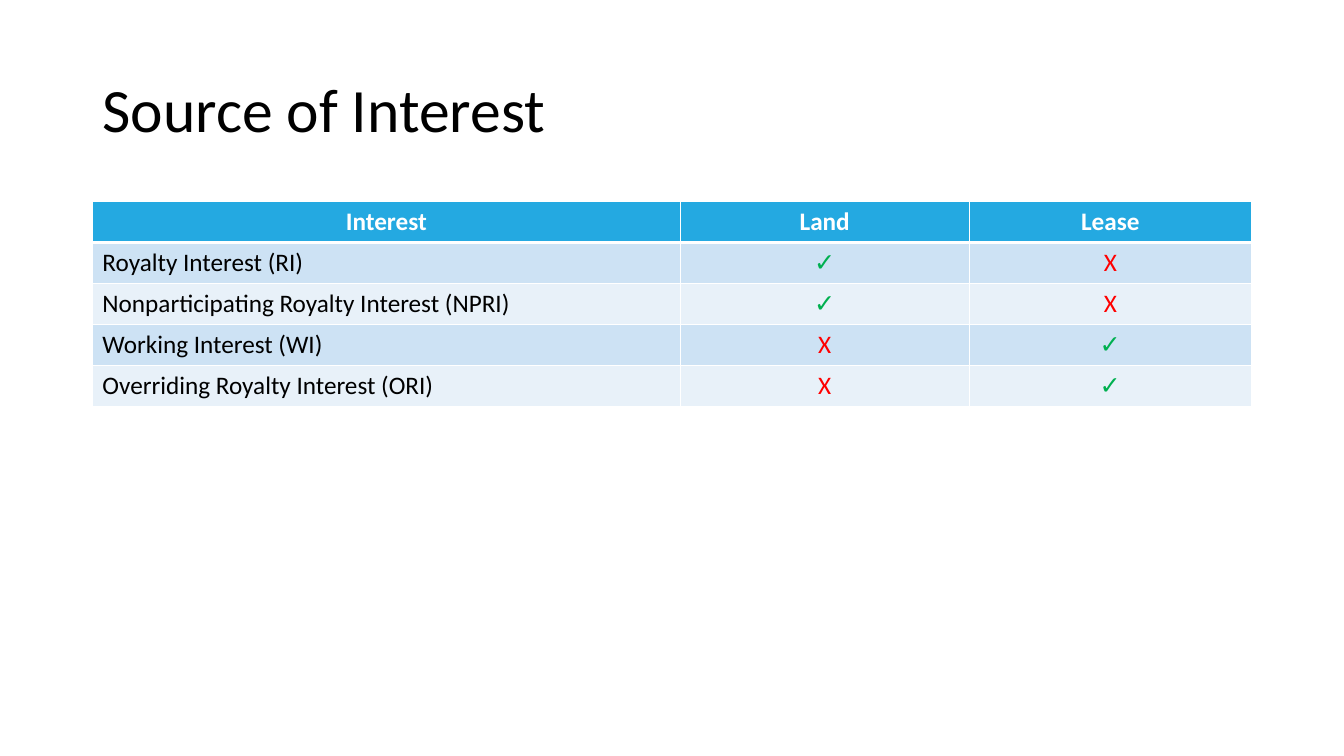
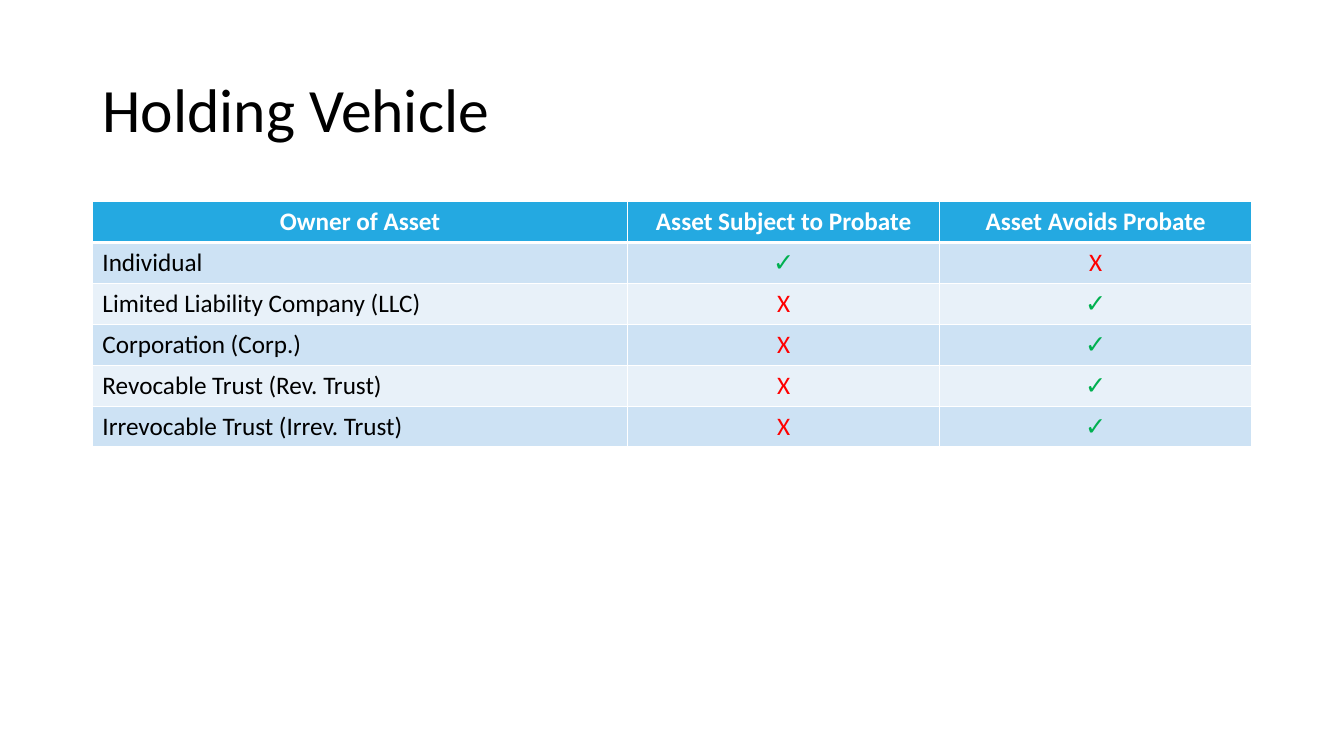
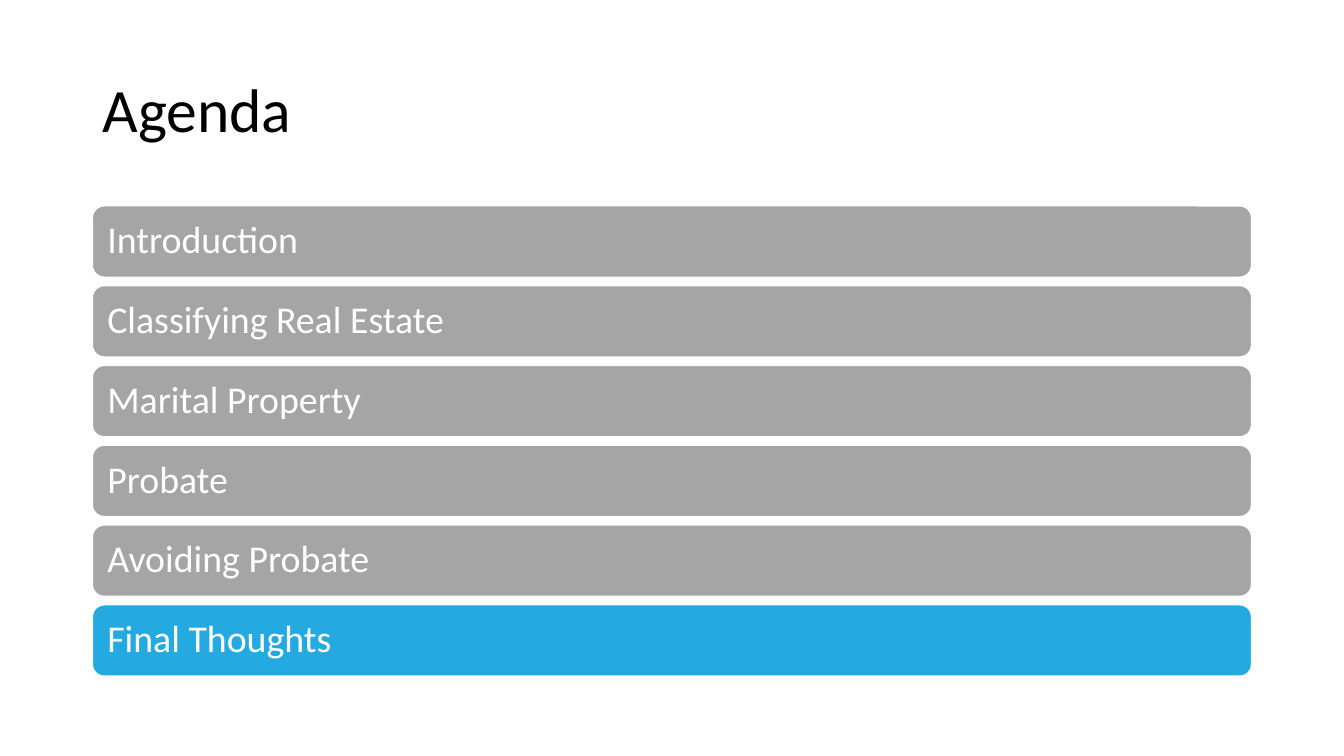
from dataclasses import dataclass

from lxml.etree import SubElement as Sub
from pptx import Presentation
from pptx.dml.color import RGBColor as RGB
from pptx.enum.shapes import MSO_SHAPE as Shape
from pptx.enum.text import MSO_ANCHOR as Anchor, PP_ALIGN as Align
from pptx.oxml.ns import qn
from pptx.util import Pt

PX = 9525
LEFT, WIDE = 88, 1104


@dataclass(frozen=True)
class Theme:
    font: str = "Calibri"
    title: int = 44
    cell: int = 18
    item: int = 27
    black: str = "000000"
    white: str = "FFFFFF"
    blue: str = "24A9E1"
    gray: str = "A5A5A5"
    bands: tuple = ("E8F1F9", "CDE2F4")
    yes: str = "00B050"
    no: str = "FF0000"


look = Theme()


def put(frame, text, size, color, bold=False, align=Align.LEFT, space=None):
    para = frame.paragraphs[0]
    para.alignment = align
    para.line_spacing = space
    run = para.add_run()
    run.text = text
    font = run.font
    font.name, font.size, font.bold = look.font, Pt(size), bold
    font.color.rgb = RGB.from_string(color)


def edge(cell, **sides):
    """Draw white cell borders; sides maps L, R, T and B to points."""
    props = cell._tc.get_or_add_tcPr()
    for side, width in sides.items():
        line = Sub(props, qn(f"a:ln{side}"), w=str(Pt(width)))
        Sub(Sub(line, qn("a:solidFill")), qn("a:srgbClr"), val=look.white)


deck = Presentation()
deck.slide_width, deck.slide_height = 1280 * PX, 720 * PX

plain = deck.slide_layouts.get_by_name("Title Only")
head = plain.placeholders[0]
head.left, head.top = LEFT * PX, 38 * PX
head.width, head.height = WIDE * PX, 139 * PX
head.text_frame.vertical_anchor = Anchor.MIDDLE

slides = {}
for name in ("Source of Interest", "Holding Vehicle", "Agenda"):
    slide = slides[name] = deck.slides.add_slide(plain)
    put(slide.shapes.title.text_frame, name, look.title, look.black, space=0.9)

# Tables
grids = {
    "Source of Interest": ((560, 275, 269), [
        ("Interest", "Land", "Lease"),
        ("Royalty Interest (RI)", "✓", "X"),
        ("Nonparticipating Royalty Interest (NPRI)", "✓", "X"),
        ("Working Interest (WI)", "X", "✓"),
        ("Overriding Royalty Interest (ORI)", "X", "✓"),
    ]),
    "Holding Vehicle": ((510, 297, 297), [
        ("Owner of Asset", "Asset Subject to Probate", "Asset Avoids Probate"),
        ("Individual", "✓", "X"),
        ("Limited Liability Company (LLC)", "X", "✓"),
        ("Corporation (Corp.)", "X", "✓"),
        ("Revocable Trust (Rev. Trust)", "X", "✓"),
        ("Irrevocable Trust (Irrev. Trust)", "X", "✓"),
    ]),
}
HIGH = 39
marks = {"✓": look.yes, "X": look.no}

for name, (cols, rows) in grids.items():
    table = slides[name].shapes.add_table(
        len(rows), len(cols), LEFT * PX, 192 * PX,
        WIDE * PX, len(rows) * HIGH * PX).table
    table.horz_banding = False
    for col, wide in zip(table.columns, cols):
        col.width = wide * PX
    for r, row in enumerate(rows):
        table.rows[r].height = HIGH * PX
        top = r == 0
        for c, text in enumerate(row):
            cell = table.cell(r, c)
            edge(cell, L=1, R=1, T=3 if r == 1 else 1, B=3 if top else 1)
            cell.fill.solid()
            cell.fill.fore_color.rgb = RGB.from_string(
                look.blue if top else look.bands[r % 2])
            color = look.white if top else marks.get(text, look.black)
            put(cell.text_frame, text, look.cell, color, bold=top,
                align=Align.CENTER if top or c else Align.LEFT)

# Agenda bars
items = ("Introduction", "Classifying Real Estate", "Marital Property",
         "Probate", "Avoiding Probate", "Final Thoughts")
now = "Final Thoughts"
TOP, BAR, GAP, PAD = 196, 68, 8, 11

for i, item in enumerate(items):
    bar = slides["Agenda"].shapes.add_shape(
        Shape.ROUNDED_RECTANGLE, LEFT * PX, (TOP + i * (BAR + GAP)) * PX,
        WIDE * PX, BAR * PX)
    bar.shadow.inherit = False
    bar.fill.solid()
    bar.fill.fore_color.rgb = RGB.from_string(
        look.blue if item == now else look.gray)
    bar.line.color.rgb = RGB.from_string(look.white)
    bar.line.width = Pt(1)
    frame = bar.text_frame
    frame.word_wrap = True
    frame.vertical_anchor = Anchor.MIDDLE
    frame.margin_left = frame.margin_right = PAD * PX
    frame.margin_top = frame.margin_bottom = PAD * PX
    put(frame, item, look.item, look.white, space=0.9)

deck.save("out.pptx")
